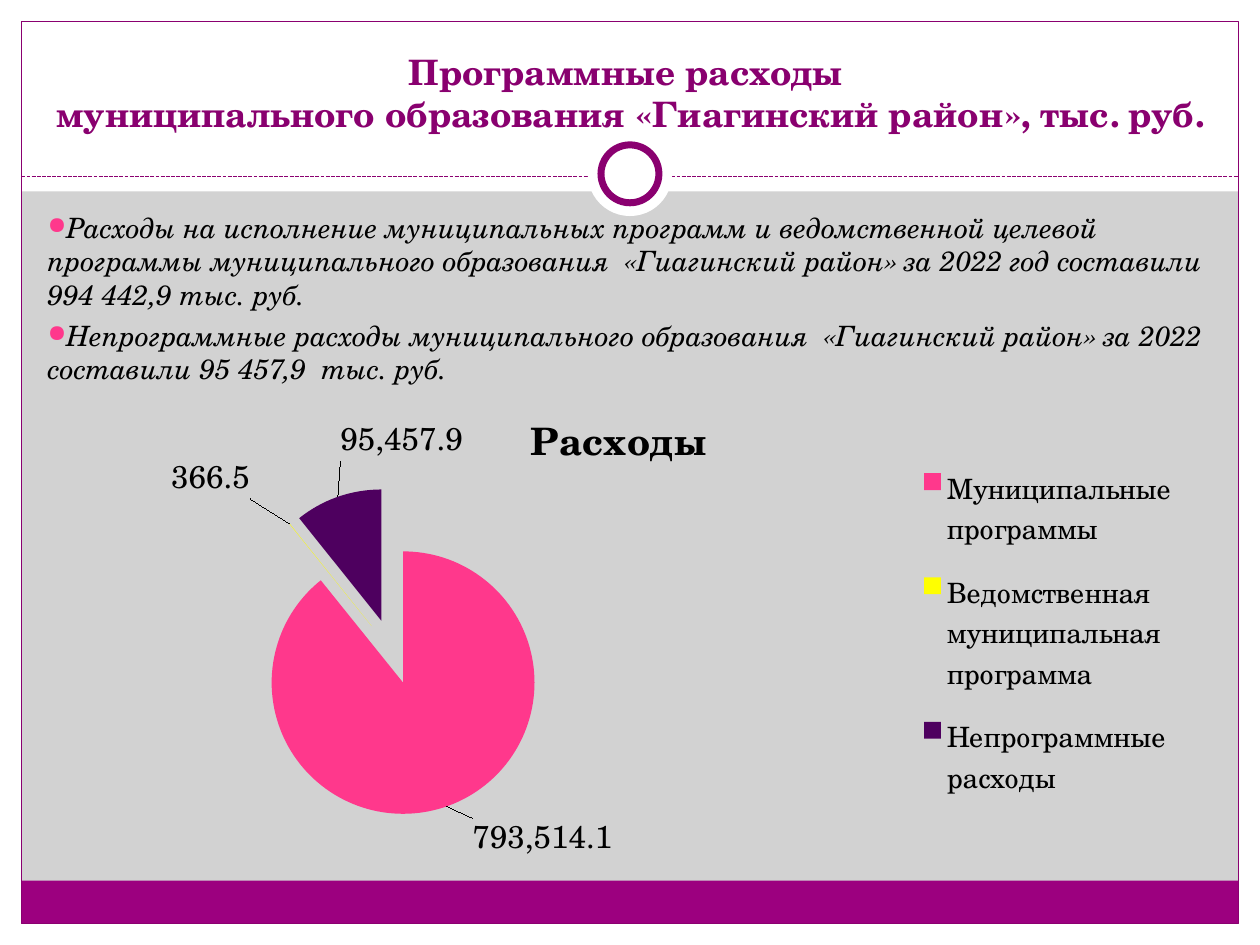
from dataclasses import dataclass

from lxml.etree import SubElement
from pptx import Presentation
from pptx.chart.data import CategoryChartData
from pptx.dml.color import RGBColor
from pptx.enum.chart import XL_CHART_TYPE, XL_LABEL_POSITION, XL_LEGEND_POSITION
from pptx.enum.dml import MSO_LINE
from pptx.enum.shapes import MSO_CONNECTOR, MSO_SHAPE
from pptx.enum.text import MSO_ANCHOR, PP_ALIGN
from pptx.oxml import parse_xml
from pptx.oxml.ns import nsdecls, qn
from pptx.util import Inches, Pt


@dataclass(frozen=True)
class Theme:
    font: str = "TeX Gyre Schola"
    ground: str = "D2D2D2"
    white: str = "FFFFFF"
    ink: str = "000000"
    rule: str = "8A0070"
    band: str = "9C007F"
    head: str = "89006F"
    pink: str = "FF388C"
    gold: str = "FFFF00"
    plum: str = "4E005F"
    title: float = 20
    body: float = 16
    label: float = 18
    chart: float = 21.6


def put(item, values):
    for name, value in values.items():
        setattr(item, name, value)


def color(code):
    return RGBColor.from_string(code)


def layout(x, y, wide=None, high=None, inner=False):
    """Manual chart layout in shares of the chart area."""
    parts = [("layoutTarget", "inner")] if inner else []
    if wide:
        parts += [("xMode", "edge"), ("yMode", "edge")]
    parts += [("x", x), ("y", y)]
    if wide:
        parts += [("w", wide), ("h", high)]
    inside = "".join(f'<c:{tag} val="{val}"/>' for tag, val in parts)
    return parse_xml(f"<c:layout {nsdecls('c')}><c:manualLayout>{inside}"
                     "</c:manualLayout></c:layout>")


class Board:
    """Draws on a slide with a grid of 100 columns and 75 rows."""
    cols, rows = 100, 75

    def __init__(self, deck, theme):
        self.theme = theme
        self.cell = deck.slide_width // self.cols
        self.slide = deck.slides.add_slide(deck.slide_layouts[6])
        fill = self.slide.background.fill
        fill.solid()
        fill.fore_color.rgb = color(theme.ground)

    def span(self, *cells):
        return [round(n * self.cell) for n in cells]

    def style(self, font, size, tint=None, **more):
        put(font, {"name": self.theme.font, "size": Pt(size), **more})
        font.color.rgb = color(tint or self.theme.ink)

    def stroke(self, line, width):
        line.color.rgb = color(self.theme.rule)
        line.width = Pt(width)

    def shape(self, at, fill=None, line=0, kind=MSO_SHAPE.RECTANGLE):
        item = self.slide.shapes.add_shape(kind, *self.span(*at))
        item.shadow.inherit = False
        if fill:
            item.fill.solid()
            item.fill.fore_color.rgb = color(fill)
        else:
            item.fill.background()
        if line:
            self.stroke(item.line, line)
        else:
            item.line.fill.background()

    def disc(self, x, y, size, line=0):
        """Circle around a centre point."""
        at = (x - size / 2, y - size / 2, size, size)
        self.shape(at, self.theme.white, line, MSO_SHAPE.OVAL)

    def dash(self, *ends):
        item = self.slide.shapes.add_connector(MSO_CONNECTOR.STRAIGHT, *self.span(*ends))
        self.stroke(item.line, 0.75)
        item.line.dash_style = MSO_LINE.SQUARE_DOT
        SubElement(item._element.spPr, qn("a:effectLst"))

    def frame(self, at, anchor):
        text = self.slide.shapes.add_textbox(*self.span(*at)).text_frame
        put(text, {"word_wrap": True, "vertical_anchor": anchor})
        return text

    def title(self, at, words):
        para = self.frame(at, MSO_ANCHOR.BOTTOM).paragraphs[0]
        para.text = words
        para.alignment = PP_ALIGN.CENTER
        for run in para.runs:
            self.style(run.font, self.theme.title, self.theme.head, bold=True)

    def bullets(self, at, items):
        text = self.frame(at, MSO_ANCHOR.TOP)
        for i, words in enumerate(items):
            para = text.add_paragraph() if i else text.paragraphs[0]
            para.space_before = Pt(4 if i else 0)
            props = para._p.get_or_add_pPr()
            tint = SubElement(props, qn("a:buClr"))
            SubElement(tint, qn("a:srgbClr"), val=self.theme.pink)
            SubElement(props, qn("a:buSzPct"), val="85000")
            SubElement(props, qn("a:buChar"), char="●")
            run = para.add_run()
            run.text = words
            self.style(run.font, self.theme.body, italic=True)

    def pie(self, at, name, slices):
        """Each slice is a category, value, colour and label shift."""
        data = CategoryChartData(number_format="#,##0.0")
        data.categories = [part[0] for part in slices]
        data.add_series(name, [part[1] for part in slices])
        chart = self.slide.shapes.add_chart(
            XL_CHART_TYPE.PIE, *self.span(*at), data).chart
        self.style(chart.font, self.theme.label)

        chart.has_title = True
        heading = chart.chart_title.text_frame
        heading.text = name
        self.style(heading.paragraphs[0].runs[0].font, self.theme.chart, bold=True)

        chart.has_legend = True
        put(chart.legend, {"position": XL_LEGEND_POSITION.RIGHT, "include_in_layout": False})
        self.style(chart.legend.font, self.theme.body)
        key = chart.legend._element
        for old in key.findall(qn("c:layout")):
            key.remove(old)
        key.find(qn("c:legendPos")).addnext(layout(0.74, 0.13, 0.25, 0.79))

        area = chart._chartSpace.chart.plotArea
        for old in area.findall(qn("c:layout")):
            area.remove(old)
        area.insert(0, layout(0, 0.22, 0.6, 0.69, inner=True))

        plot = chart.plots[0]
        plot.vary_by_categories = True
        series = plot.series[0]
        labels = series.data_labels
        put(labels, {"show_value": True, "number_format": "#,##0.0",
                     "number_format_is_linked": False,
                     "position": XL_LABEL_POSITION.OUTSIDE_END})
        self.style(labels.font, self.theme.label)
        leader = labels._element.find(qn("c:showLeaderLines"))
        if leader is None:
            leader = SubElement(labels._element, qn("c:showLeaderLines"))
        leader.set("val", "1")
        for i, (_, _, tint, shift) in enumerate(slices):
            point = series.points[i]
            point.format.fill.solid()
            point.format.fill.fore_color.rgb = color(tint)
            point.data_label.position = XL_LABEL_POSITION.OUTSIDE_END
            mark = labels._element.findall(qn("c:dLbl"))[i]
            mark.find(qn("c:idx")).addnext(layout(*shift))
        burst = parse_xml(f'<c:explosion {nsdecls("c")} val="25"/>')
        series._element.find(qn("c:dPt")).addprevious(burst)


def main():
    deck = Presentation()
    put(deck, {"slide_width": Inches(10), "slide_height": Inches(7.5)})
    theme = Theme()
    board = Board(deck, theme)
    cols, rows, edge = board.cols, board.rows, 1.7
    wide, high = cols - 2 * edge, rows - 2 * edge

    for at in ((0, rows - edge, cols, edge), (0, 0, cols, 15.2),
               (0, 0, edge, rows), (cols - edge, 0, edge, rows)):
        board.shape(at, theme.white)
    board.shape((edge, 69.9, wide, 3.4), theme.band)
    board.shape((edge, edge, wide, high), line=0.75)
    board.dash(edge, 14, cols - edge, 14)
    board.disc(cols / 2, 13.8, 6.7)
    board.disc(cols / 2, 13.8, 4.6, line=4)

    board.title((1.2, 1.3, 96.9, 9.9),
                "Программные расходы\v муниципального образования «Гиагинский район», тыс. руб.")
    board.bullets((2.8, 16.2, 95.3, 16.5), (
        "Расходы на исполнение муниципальных программ и ведомственной целевой программы "
        "муниципального образования  «Гиагинский район» за 2022 год составили "
        "994 442,9 тыс. руб.",
        "Непрограммные расходы муниципального образования  «Гиагинский район» за 2022 "
        "составили 95 457,9  тыс. руб."))
    board.pie((3.5, 30.4, 92.1, 37.8), "Расходы ", (
        ("Муниципальные программы", 793514.1, theme.pink, (0.02, 0.01)),
        ("Ведомственная муниципальная программа", 366.5, theme.gold, (-0.03, -0.04)),
        ("Непрограммные расходы", 95457.9, theme.plum, (0.11, -0.06))))
    deck.save("out.pptx")


if __name__ == "__main__":
    main()
